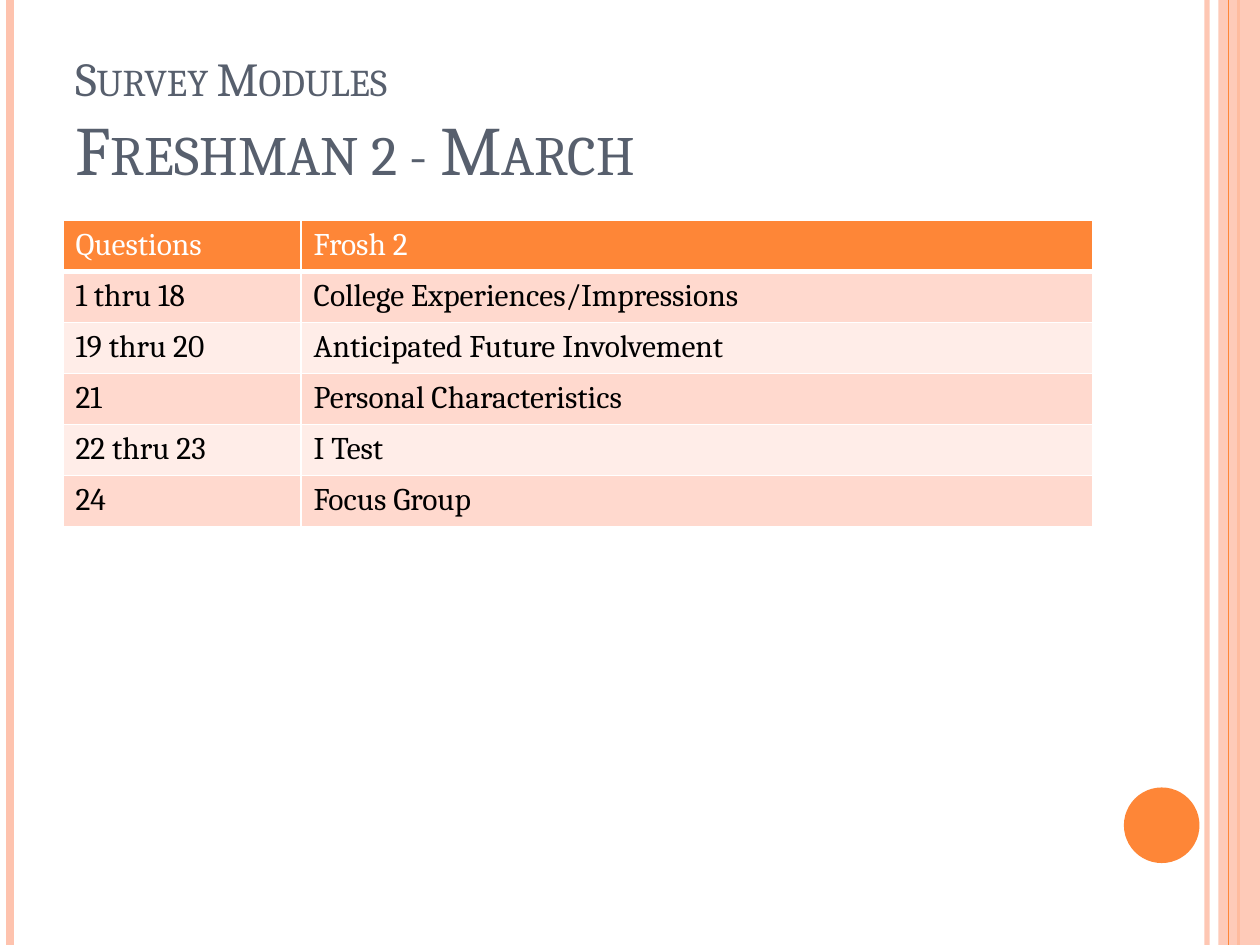
from dataclasses import dataclass

from lxml import etree
from pptx import Presentation
from pptx import util as u
from pptx.dml.color import RGBColor
from pptx.enum import shapes, text
from pptx.oxml.ns import qn


@dataclass(frozen=True)
class Theme:
    """Colours, font and type sizes of the slide."""
    font: str = "Cambria"
    accent: str = "FE8637"
    stripe: str = "FEC3AE"
    heading: str = "575F6D"
    body: str = "000000"
    white: str = "FFFFFF"
    bands: tuple = ("FFD9CE", "FFEDE8")
    kicker_size: float = 27
    title_size: float = 39.6
    table_size: float = 18


THEME = Theme()
TITLE_LINES = (
    ("Survey Modules", THEME.kicker_size),
    ("Freshman 2 - March", THEME.title_size),
)
MODULES = (
    ("Questions", "Frosh 2"),
    ("1 thru 18", "College Experiences/Impressions"),
    ("19 thru 20", "Anticipated Future Involvement"),
    ("21", "Personal Characteristics"),
    ("22 thru 23", "I Test"),
    ("24", "Focus Group"),
)


def colour(value):
    """Return the RGB colour for a hex value."""
    return RGBColor.from_string(value)


def set_alpha(fill_owner, percent):
    """Make the solid colour inside an element partly transparent."""
    value = next(fill_owner.iter(qn("a:srgbClr")))
    etree.SubElement(value, qn("a:alpha")).set("val", str(percent * 1000))


def add_rule(slide, x, height, line_colour, width, opacity=100):
    """Draw a full-height vertical rule."""
    left = u.Inches(x)
    rule = slide.shapes.add_connector(
        shapes.MSO_CONNECTOR.STRAIGHT, left, 0, left, u.Inches(height))
    rule.line.color.rgb = colour(line_colour)
    rule.line.width = u.Pt(width)
    properties = rule._element.spPr
    if opacity < 100:
        set_alpha(properties, opacity)
    etree.SubElement(properties, qn("a:effectLst"))


def add_plain_shape(slide, kind, left, top, width, height, fill):
    """Add a filled shape without outline or shadow."""
    shape = slide.shapes.add_shape(
        kind, u.Inches(left), u.Inches(top), u.Inches(width), u.Inches(height))
    shape.shadow.inherit = False
    shape.fill.solid()
    shape.fill.fore_color.rgb = colour(fill)
    shape.line.fill.background()
    return shape


def add_frame(slide, width, height):
    """Place the side rules, right band and disc within the slide box."""
    add_rule(slide, width - 0.42, height, THEME.stripe, 3, 93)
    add_rule(slide, 0.08, height, THEME.stripe, 4.5)
    add_rule(slide, width - 0.17, height, THEME.accent, 1.5)
    band = add_plain_shape(slide, shapes.MSO_SHAPE.RECTANGLE,
                           width - 0.33, 0, 0.33, height, THEME.stripe)
    set_alpha(band._element.spPr, 87)
    add_rule(slide, width - 0.25, height, THEME.accent, 0.75)
    add_plain_shape(slide, shapes.MSO_SHAPE.OVAL,
                    width - 1.08, height - 1.25, 0.6, 0.6, THEME.accent)


def add_title(slide, left, top, width, height):
    """Place the two-line small-caps title at the bottom of its box."""
    box = slide.shapes.add_textbox(
        u.Inches(left), u.Inches(top), u.Inches(width), u.Inches(height))
    frame = box.text_frame
    frame.word_wrap = True
    frame.vertical_anchor = text.MSO_ANCHOR.BOTTOM
    paragraph = frame.paragraphs[0]
    for index, (words, size) in enumerate(TITLE_LINES):
        if index:
            paragraph.add_line_break()
        run = paragraph.add_run()
        run.text = words
        run.font.name = THEME.font
        run.font.size = u.Pt(size)
        run.font.color.rgb = colour(THEME.heading)
        run.font._element.set("cap", "small")


def add_borders(cell, bottom_width):
    """Give a cell white borders with its own bottom width."""
    properties = cell._tc.get_or_add_tcPr()
    widths = {"L": 1, "R": 1, "T": 1, "B": bottom_width}
    for index, (side, width) in enumerate(widths.items()):
        line = etree.Element(qn(f"a:ln{side}"), w=str(u.Pt(width)))
        fill = etree.SubElement(line, qn("a:solidFill"))
        etree.SubElement(fill, qn("a:srgbClr")).set("val", THEME.white)
        properties.insert(index, line)


def add_modules_table(slide, left, top, width, height):
    """Place the banded table of question ranges and modules."""
    table = slide.shapes.add_table(
        len(MODULES), 2, u.Inches(left), u.Inches(top),
        u.Inches(width), u.Inches(height)).table
    first_width = 1.89
    table.columns[0].width = u.Inches(first_width)
    table.columns[1].width = u.Inches(width - first_width)
    for row, values in enumerate(MODULES):
        header = row == 0
        for column, value in enumerate(values):
            cell = table.cell(row, column)
            cell.text = value
            cell.fill.solid()
            cell.fill.fore_color.rgb = colour(
                THEME.accent if header else THEME.bands[(row - 1) % 2])
            add_borders(cell, 3 if header else 1)
            font = cell.text_frame.paragraphs[0].font
            font.name = THEME.font
            font.size = u.Pt(THEME.table_size)
            font.bold = False
            font.color.rgb = colour(THEME.white if header else THEME.body)


def main():
    """Build and save the survey modules slide."""
    width, height = 10, 7.5
    presentation = Presentation()
    presentation.slide_width = u.Inches(width)
    presentation.slide_height = u.Inches(height)
    slide = presentation.slides.add_slide(presentation.slide_layouts[6])
    add_frame(slide, width, height)
    add_title(slide, 0.5, 0.3, 8.17, 1.25)
    add_modules_table(slide, 0.5, 1.75, 8.17, 2.43)
    presentation.save("out.pptx")


if __name__ == "__main__":
    main()
